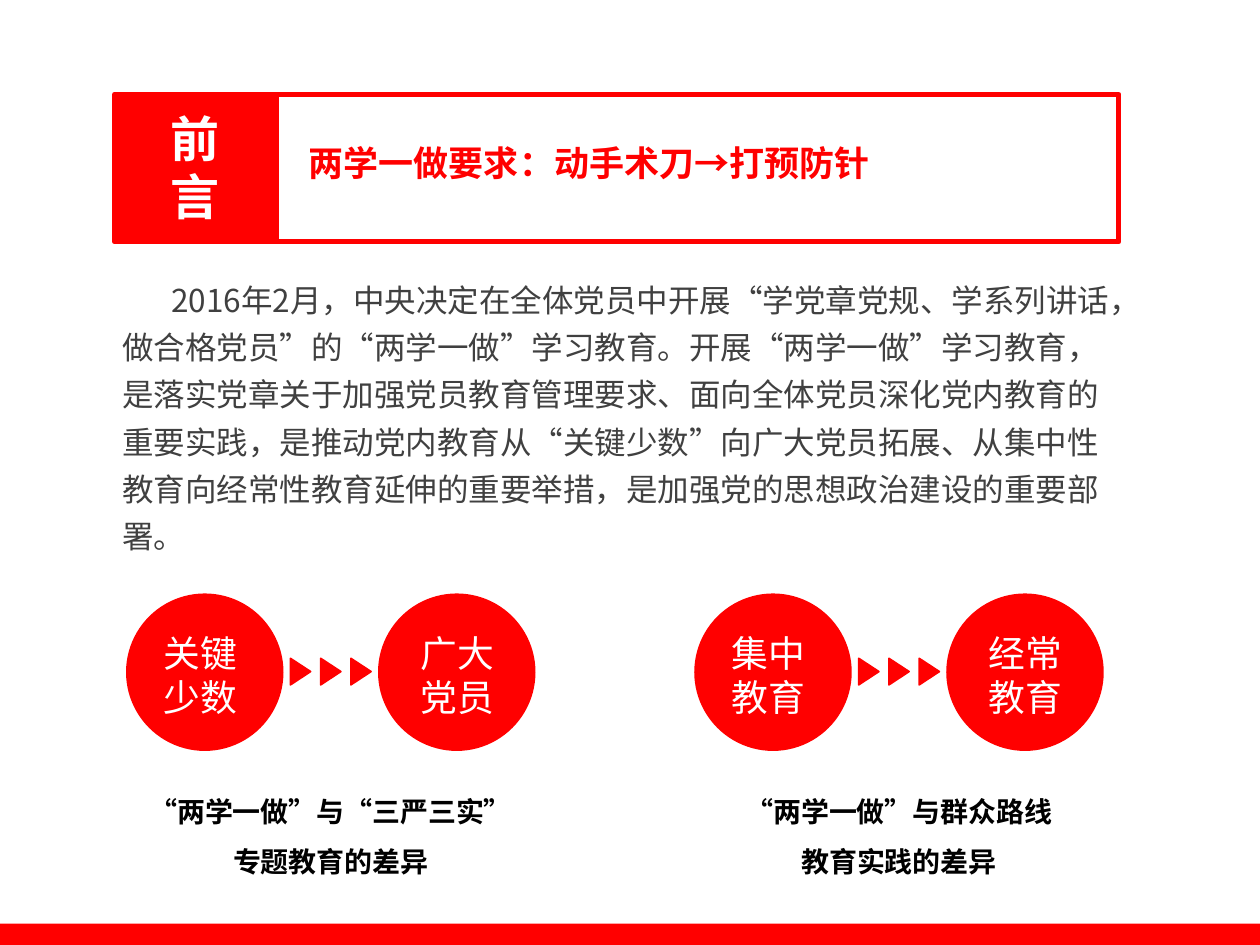
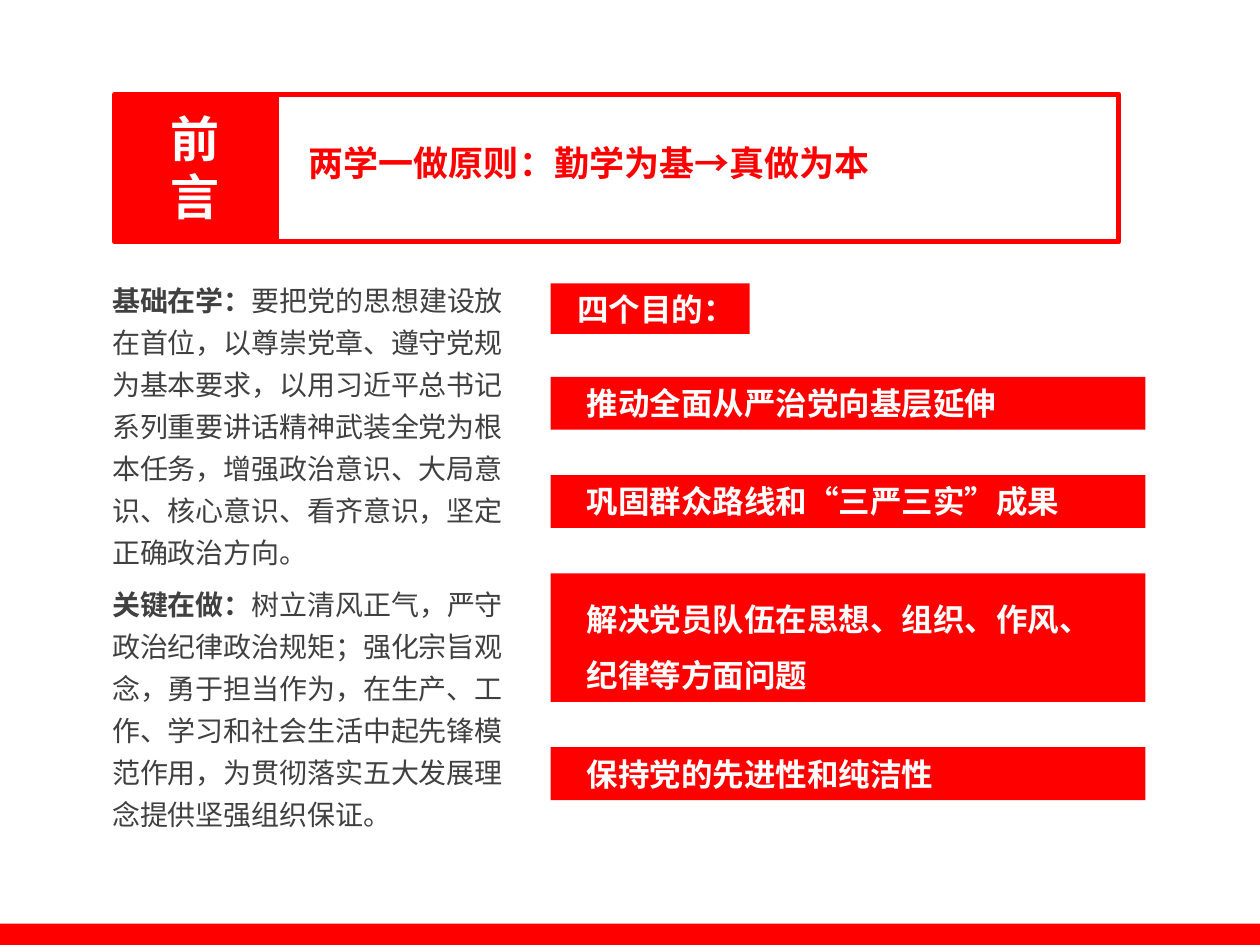
from lxml.etree import SubElement
from pptx import Presentation
from pptx.dml.color import RGBColor
from pptx.enum.shapes import MSO_SHAPE as SHAPE
from pptx.enum.text import MSO_ANCHOR as ANCHOR, MSO_AUTO_SIZE as AUTOSIZE, PP_ALIGN as ALIGN
from pptx.oxml.ns import qn
from pptx.util import Inches, Pt

COLORS = {"red": "FF0000", "white": "FFFFFF", "body": "404040", "black": "000000"}
CJK_FONT = "Noto Sans CJK SC"
TIGHT = (0.08, 0.04)
NORMAL = (0.1, 0.05)


def add_block(shapes, kind, left, top, width, height, line_width=0, filled=True):
    """Add a red preset shape, optionally outlined or hollow."""
    block = shapes.add_shape(kind, Inches(left), Inches(top), Inches(width), Inches(height))
    block.shadow.inherit = False
    if filled:
        block.fill.solid()
        block.fill.fore_color.rgb = RGBColor.from_string(COLORS["red"])
    else:
        block.fill.background()
    if line_width:
        block.line.color.rgb = RGBColor.from_string(COLORS["red"])
        block.line.width = Pt(line_width)
    else:
        block.line.fill.background()
    return block


def set_style(holder, size, color, bold=False, font=CJK_FONT, align=ALIGN.LEFT,
              spacing=1.0, anchor=ANCHOR.TOP, insets=NORMAL, wrap=True):
    """Format the frame, paragraphs and runs of a shape that has its text."""
    frame = holder.text_frame
    frame.word_wrap = wrap
    frame.auto_size = AUTOSIZE.NONE
    frame.vertical_anchor = anchor
    frame.margin_left = frame.margin_right = Inches(insets[0])
    frame.margin_top = frame.margin_bottom = Inches(insets[1])
    for paragraph in frame.paragraphs:
        paragraph.alignment = align
        paragraph.line_spacing = spacing
        paragraph.space_before = Pt(0)
        for run in paragraph.runs:
            run.font.size = Pt(size)
            run.font.bold = bold
            run.font.name = font
            run.font.color.rgb = RGBColor.from_string(COLORS[color])
            SubElement(run.font._element, qn("a:ea"), typeface=CJK_FONT)


prs = Presentation()
prs.slide_width, prs.slide_height = Inches(10), Inches(7.5)

# Shared frame: footer band, section tag, outlined title, body placeholder
pages = [
    ("两学一做要求：动手术刀→打预防针", (0.89, 2.1, 8.13, 2.36)),
    ("两学一做原则：勤学为基→真做为本", (0.81, 2.12, 3.34, 4.54)),
]
slides = []
for heading, body_area in pages:
    slide = prs.slides.add_slide(prs.slide_layouts[1])
    slides.append(slide)
    add_block(slide.shapes, SHAPE.RECTANGLE, 0, 7.33, 10, 0.17)
    add_block(slide.shapes, SHAPE.RECTANGLE, 0.91, 0.75, 1.27, 1.17, line_width=3)
    add_block(slide.shapes, SHAPE.RECTANGLE, 2.19, 0.75, 6.69, 1.17, line_width=3, filled=False)

    section = slide.shapes.add_textbox(Inches(1.27), Inches(0.81), Inches(0.67), Inches(1.03))
    section.text_frame.text = "前言"
    set_style(section, 28, "white", bold=True, anchor=ANCHOR.MIDDLE, insets=TIGHT)

    title, body = slide.shapes.title, slide.placeholders[1]
    for holder, area in ((title, (2.37, 1.08, 4.66, 0.42)), (body, body_area)):
        holder.left, holder.top, holder.width, holder.height = map(Inches, area)
    title.text_frame.text = heading
    set_style(title, 20, "red", bold=True, insets=TIGHT, wrap=False)

requirements, principles = slides

# Slide 1: introduction
intro = requirements.placeholders[1]
intro.text_frame.text = (
    "2016年2月，中央决定在全体党员中开展“学党章党规、学系列讲话，做合格党员”的“两学一做”学习教育。"
    "开展“两学一做”学习教育，是落实党章关于加强党员教育管理要求、面向全体党员深化党内教育的重要实践，"
    "是推动党内教育从“关键少数”向广大党员拓展、从集中性教育向经常性教育延伸的重要举措，"
    "是加强党的思想政治建设的重要部署。"
)

# Slide 1: two transitions, each with circles, arrows and a caption
transitions = [
    (1.0, ("关键少数", "广大党员"), "“两学一做”与“三严三实”\n专题教育的差异", 3.75),
    (5.51, ("集中教育", "经常教育"), "“两学一做”与群众路线\n教育实践的差异", 3.33),
]
for left, stages, caption_text, caption_width in transitions:
    group = requirements.shapes.add_group_shape().shapes
    for step, stage in enumerate(stages):
        add_block(group, SHAPE.OVAL, left + 2 * step, 4.71, 1.25, 1.25)
        label = group.add_textbox(Inches(left + 0.2 + 2.04 * step), Inches(4.96),
                                  Inches(0.83), Inches(0.81))
        label.text_frame.text = stage
        set_style(label, 21, "white", font="Arial")
    for step in range(3):
        arrow = add_block(group, SHAPE.ISOSCELES_TRIANGLE,
                          left + 1.28 + 0.24 * step, 5.25, 0.21, 0.16, line_width=1)
        arrow.rotation = 90

    caption_left = left + (3.25 - caption_width) / 2
    caption = requirements.shapes.add_textbox(Inches(caption_left), Inches(6.12),
                                              Inches(caption_width), Inches(0.86))
    caption.text_frame.text = caption_text
    set_style(caption, 16, "black", bold=True, align=ALIGN.CENTER, spacing=1.5)

# Slide 2: principles with bold lead-ins
principle_texts = [
    ("基础在学：",
     "要把党的思想建设放在首位，以尊崇党章、遵守党规为基本要求，以用习近平总书记系列重要讲话精神武装全党为根本任务，"
     "增强政治意识、大局意识、核心意识、看齐意识，坚定正确政治方向。"),
    ("关键在做：",
     "树立清风正气，严守政治纪律政治规矩；强化宗旨观念，勇于担当作为，在生产、工作、学习和社会生活中起先锋模范作用，"
     "为贯彻落实五大发展理念提供坚强组织保证。"),
]
basis = principles.placeholders[1]
basis.text_frame.text = "\n".join(lead for lead, detail in principle_texts)
for paragraph, (lead, detail) in zip(basis.text_frame.paragraphs, principle_texts):
    paragraph.add_run().text = detail

# Body formatting: no bullets, first-line indent only on the introduction
for holder, size, indent in ((intro, 18, 0.39), (basis, 16, 0)):
    set_style(holder, size, "body", spacing=1.25, anchor=ANCHOR.MIDDLE, insets=TIGHT)
    for paragraph in holder.text_frame.paragraphs:
        properties = paragraph._p.get_or_add_pPr()
        properties.set("marL", "0")
        properties.set("indent", str(Inches(indent)))
        SubElement(properties, qn("a:buNone"))
for paragraph in basis.text_frame.paragraphs:
    paragraph.runs[0].font.bold = True
basis.text_frame.paragraphs[0].space_after = Pt(6)

# Slide 2: four purposes
purposes_head = add_block(principles.shapes, SHAPE.RECTANGLE, 4.37, 2.25, 1.58, 0.4)
purposes_head.text_frame.text = "四个目的："
set_style(purposes_head, 18, "white", bold=True)
purposes_head.text_frame.margin_left = Inches(0.21)
purposes_head.text_frame.margin_right = 0

purposes = [
    ("推动全面从严治党向基层延伸", 0.42, 1.0),
    ("巩固群众路线和“三严三实”成果", 0.42, 1.0),
    ("解决党员队伍在思想、组织、作风、\n纪律等方面问题", 1.02, 1.5),
    ("保持党的先进性和纯洁性", 0.42, 1.0),
]
top = 2.99
for purpose_text, height, spacing in purposes:
    group = principles.shapes.add_group_shape().shapes
    add_block(group, SHAPE.RECTANGLE, 4.37, top, 4.72, height)
    purpose = group.add_textbox(Inches(4.56), Inches(top + 0.01),
                                Inches(4.54), Inches(height - 0.01))
    purpose.text_frame.text = purpose_text
    set_style(purpose, 18, "white", bold=True, spacing=spacing)
    top += height + 0.36

prs.save("out.pptx")
